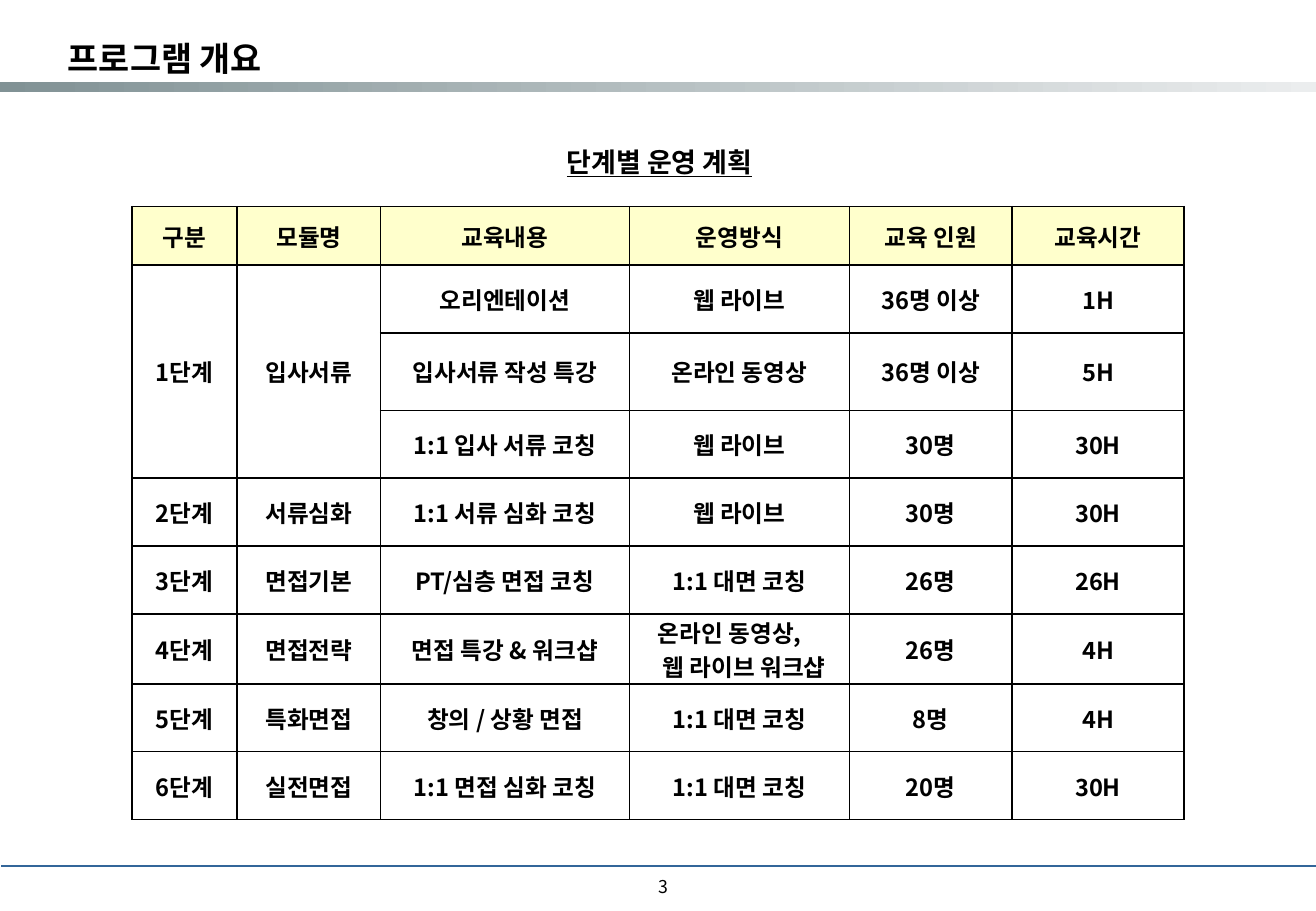
from dataclasses import dataclass

from lxml import etree
from pptx import Presentation
from pptx.dml.color import RGBColor
from pptx.enum.shapes import MSO_CONNECTOR, MSO_SHAPE
from pptx.enum.text import MSO_ANCHOR, PP_ALIGN
from pptx.oxml.ns import qn
from pptx.slide import Slide
from pptx.table import _Cell
from pptx.util import Cm, Pt

LEFT, CENTER, RIGHT = PP_ALIGN.LEFT, PP_ALIGN.CENTER, PP_ALIGN.RIGHT
MIDDLE, TOP = MSO_ANCHOR.MIDDLE, MSO_ANCHOR.TOP
RECTANGLE, STRAIGHT = MSO_SHAPE.RECTANGLE, MSO_CONNECTOR.STRAIGHT

FONT = "Noto Sans CJK KR"
BLACK = RGBColor(0x00, 0x00, 0x00)
WHITE = RGBColor(0xFF, 0xFF, 0xFF)
HEADER_YELLOW = RGBColor(0xFF, 0xFF, 0xCC)
BAND_COLORS = (RGBColor(0x81, 0x92, 0x95), RGBColor(0xEB, 0xED, 0xEE))
FOOTER_BLUE = RGBColor(0x33, 0x66, 0x99)

# A4 slide format, which is a whole number only in points
SLIDE_WIDTH, SLIDE_HEIGHT = Pt(780), Pt(540)
COLUMN_WIDTHS = (2.2, 3, 5.2, 4.6, 3.4, 3.6)
HEADER_HEIGHT, ROW_HEIGHT = 1.22, 1.42
SPECIAL_HEIGHTS = {2: 1.62, 6: 1.46}
MERGED_ROWS = (1, 3)
MERGED_COLUMNS = (0, 1)
MARGINS = ("margin_left", "margin_right", "margin_top", "margin_bottom")

HEADERS = ("구분", "모듈명", "교육내용", "운영방식", "교육 인원", "교육시간")


@dataclass(frozen=True)
class Course:
    stage: str
    module: str
    content: str
    method: str
    people: str
    hours: str

    def values(self) -> tuple[str, ...]:
        return (self.stage, self.module, self.content,
                self.method, self.people, self.hours)


LIVE, VIDEO, IN_PERSON = "웹 라이브", "온라인 동영상", "1:1 대면 코칭"
WORKSHOP = f"{VIDEO},\v{LIVE} 워크샵"
WORKSHOP_INDENTS = {"marL": Cm(0.6), "marR": Cm(0.4), "indent": Cm(-0.6)}

COURSES = (
    Course("1단계", "입사서류", "오리엔테이션", LIVE, "36명 이상", "1H"),
    Course("", "", "입사서류 작성 특강", VIDEO, "36명 이상", "5H"),
    Course("", "", "1:1 입사 서류 코칭", LIVE, "30명", "30H"),
    Course("2단계", "서류심화", "1:1 서류 심화 코칭", LIVE, "30명", "30H"),
    Course("3단계", "면접기본", "PT/심층 면접 코칭", IN_PERSON, "26명", "26H"),
    Course("4단계", "면접전략", "면접 특강 & 워크샵", WORKSHOP, "26명", "4H"),
    Course("5단계", "특화면접", "창의 / 상황 면접", IN_PERSON, "8명", "4H"),
    Course("6단계", "실전면접", "1:1 면접 심화 코칭", IN_PERSON, "20명", "30H"),
)


@dataclass(frozen=True)
class TextStyle:
    size: float
    align: PP_ALIGN
    anchor: MSO_ANCHOR = MIDDLE
    bold: bool = True
    underline: bool = False
    line_spacing: float = 1.0


TITLE = TextStyle(20, LEFT, line_spacing=1.1)
SUBTITLE = TextStyle(16, CENTER, TOP, underline=True)
PAGE_NUMBER = TextStyle(10.5, RIGHT, bold=False)
CELL = TextStyle(14, CENTER)


def set_attributes(target: object, values: dict) -> None:
    for name, value in values.items():
        setattr(target, name, value)


def write_text(text_frame, text: str, style: TextStyle) -> None:
    text_frame.text = text
    for paragraph in text_frame.paragraphs:
        set_attributes(paragraph, {"alignment": style.align,
                                   "line_spacing": style.line_spacing})
        for run in paragraph.runs:
            set_attributes(run.font, {"name": FONT, "size": Pt(style.size),
                                      "bold": style.bold,
                                      "underline": style.underline})
            run.font.color.rgb = BLACK
            east_asian = etree.SubElement(run.font._element, qn("a:ea"))
            east_asian.set("typeface", FONT)


def fill_text_shape(shape, box: tuple[float, ...], text: str,
                    style: TextStyle) -> None:
    names = ("left", "top", "width", "height")
    set_attributes(shape, dict(zip(names, map(Cm, box))))
    set_attributes(shape.text_frame, {"word_wrap": True,
                                      "vertical_anchor": style.anchor})
    write_text(shape.text_frame, text, style)


def add_text(slide: Slide, box: tuple[float, ...], text: str,
             style: TextStyle) -> None:
    fill_text_shape(slide.shapes.add_textbox(0, 0, 0, 0), box, text, style)


def add_title(slide: Slide) -> None:
    title = slide.shapes.title
    fill_text_shape(title, (1.17, 0.58, 14.53, 1.2), "프로그램 개요", TITLE)
    set_attributes(title.text_frame, dict.fromkeys(MARGINS, Cm(0.25)))


def add_header_band(slide: Slide) -> None:
    band = slide.shapes.add_shape(RECTANGLE, 0, Cm(1.72), SLIDE_WIDTH, Cm(0.2))
    band.shadow.inherit = False
    band.line.fill.background()
    band.fill.gradient()
    band.fill.gradient_angle = 0
    for stop, color in zip(band.fill.gradient_stops, BAND_COLORS):
        stop.color.rgb = color


def add_footer_line(slide: Slide) -> None:
    line = slide.shapes.add_connector(STRAIGHT, Cm(0.03), Cm(18.11),
                                      SLIDE_WIDTH, Cm(18.11))
    line.line.color.rgb = FOOTER_BLUE
    line.line.width = Pt(0.75)
    etree.SubElement(line._element.spPr, qn("a:effectLst"))


def add_borders(cell: _Cell) -> None:
    properties = cell._tc.get_or_add_tcPr()
    for side in ("lnL", "lnR", "lnT", "lnB"):
        border = etree.SubElement(properties, qn(f"a:{side}"), w=str(Pt(1)))
        fill = etree.SubElement(border, qn("a:solidFill"))
        etree.SubElement(fill, qn("a:srgbClr"), val=str(BLACK))


def format_cell(cell: _Cell, text: str, color: RGBColor) -> None:
    add_borders(cell)
    cell.fill.solid()
    cell.fill.fore_color.rgb = color
    set_attributes(cell, dict.fromkeys(MARGINS, 0))
    cell.vertical_anchor = CELL.anchor
    write_text(cell.text_frame, text, CELL)
    if text == WORKSHOP:
        properties = cell.text_frame.paragraphs[0]._p.get_or_add_pPr()
        for name, length in WORKSHOP_INDENTS.items():
            properties.set(name, str(length))


def add_plan_table(slide: Slide) -> None:
    rows = [HEADERS] + [course.values() for course in COURSES]
    heights = [HEADER_HEIGHT] + [ROW_HEIGHT] * len(COURSES)
    for row_index, height in SPECIAL_HEIGHTS.items():
        heights[row_index] = height
    table = slide.shapes.add_table(
        len(rows), len(HEADERS), Cm(2.76), Cm(4.32),
        Cm(sum(COLUMN_WIDTHS)), Cm(sum(heights))).table
    set_attributes(table, {"first_row": False, "horz_banding": False})
    for column, width in zip(table.columns, COLUMN_WIDTHS):
        column.width = Cm(width)
    for row_index, (values, height) in enumerate(zip(rows, heights)):
        table.rows[row_index].height = Cm(height)
        color = WHITE if row_index else HEADER_YELLOW
        for column_index, text in enumerate(values):
            format_cell(table.cell(row_index, column_index), text, color)
    first_row, last_row = MERGED_ROWS
    for column_index in MERGED_COLUMNS:
        table.cell(first_row, column_index).merge(
            table.cell(last_row, column_index))


def main() -> None:
    presentation = Presentation()
    set_attributes(presentation, {"slide_width": SLIDE_WIDTH,
                                  "slide_height": SLIDE_HEIGHT})
    title_only = presentation.slide_layouts.get_by_name("Title Only")
    slide = presentation.slides.add_slide(title_only)
    add_header_band(slide)
    add_footer_line(slide)
    add_text(slide, (7.8, 18.03, 6.43, 1.02), "3", PAGE_NUMBER)
    add_title(slide)
    add_plan_table(slide)
    add_text(slide, (9.3, 2.92, 8.99, 0.94), "단계별 운영 계획", SUBTITLE)
    presentation.save("out.pptx")


if __name__ == "__main__":
    main()
